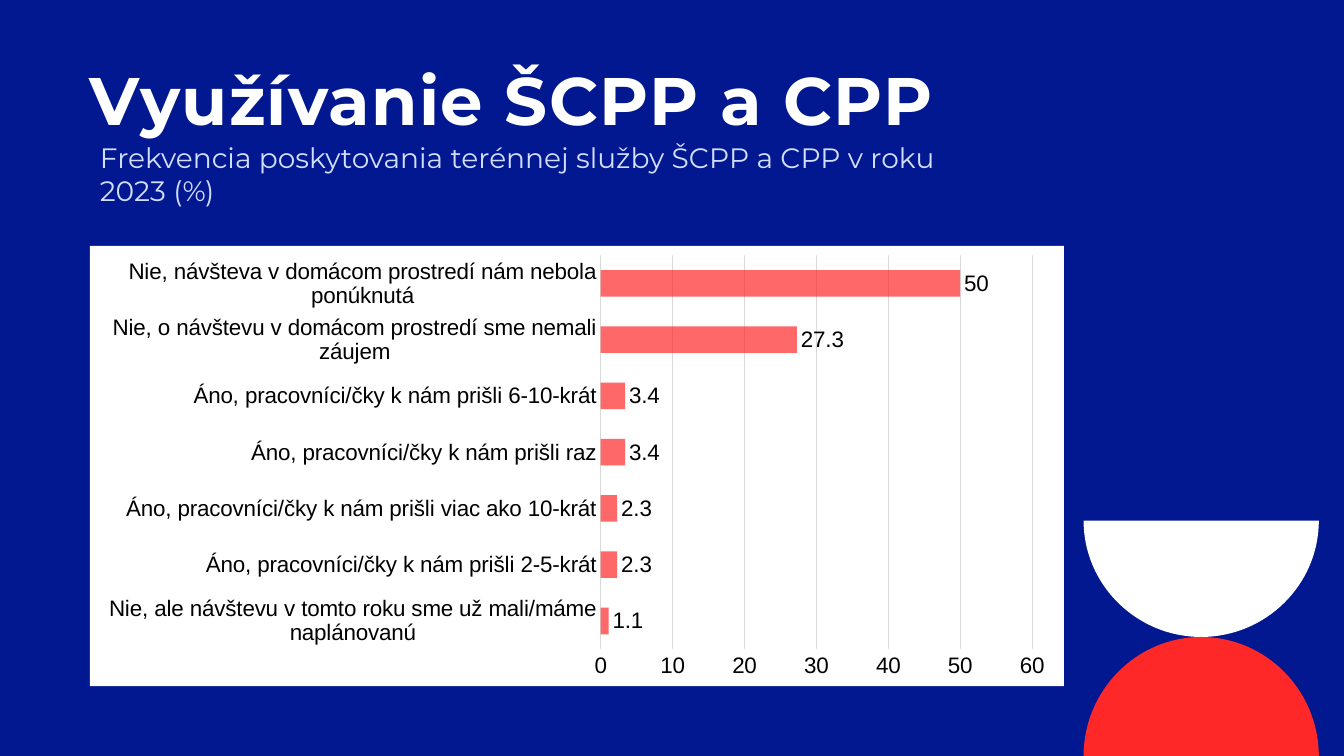
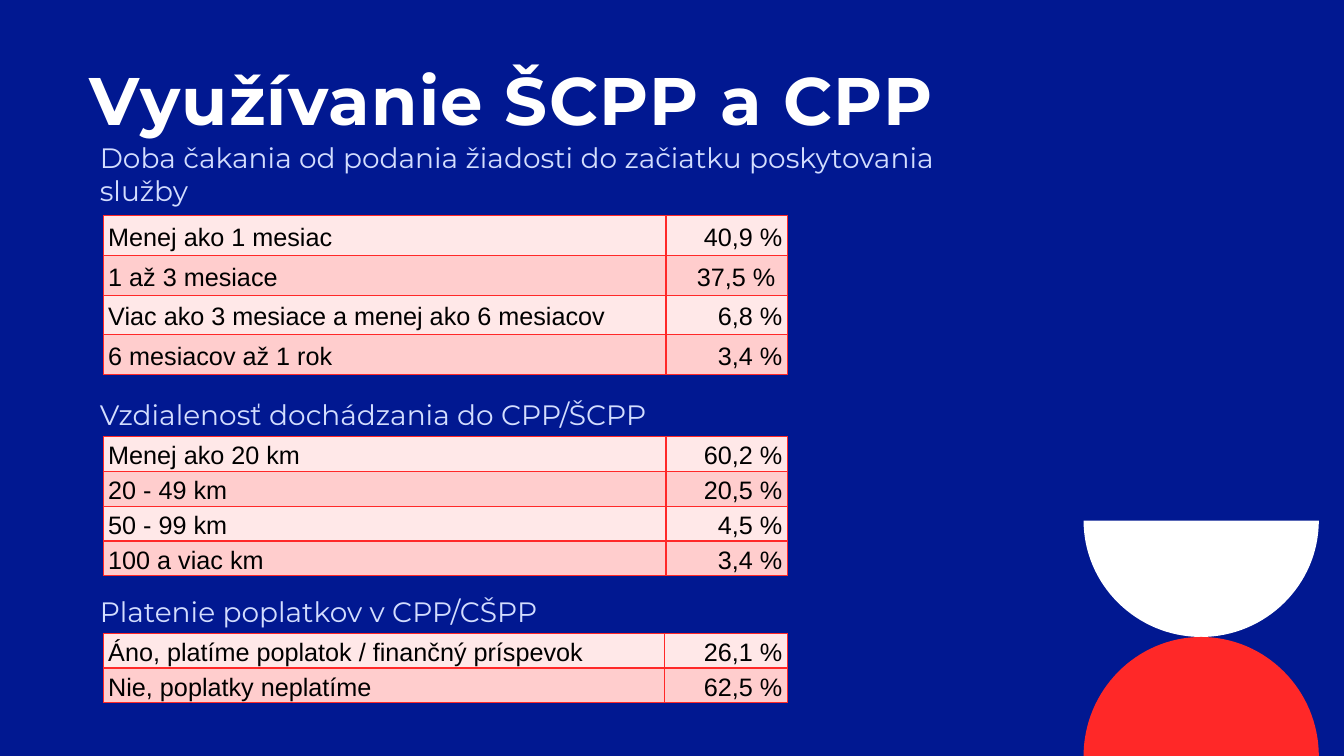
from lxml.etree import SubElement as Sub
from pptx import Presentation
from pptx.chart.data import CategoryChartData as ChartData
from pptx.dml.color import RGBColor
from pptx.enum.chart import XL_CHART_TYPE as Kind
from pptx.enum.chart import XL_LABEL_POSITION as Spot
from pptx.enum.chart import XL_TICK_MARK as Tick
from pptx.enum.text import MSO_ANCHOR as Anchor
from pptx.enum.text import MSO_AUTO_SIZE as Fit
from pptx.enum.text import PP_ALIGN as Align
from pptx.oxml import parse_xml
from pptx.oxml.ns import nsdecls, qn
from pptx.util import Pt

NAVY, WHITE, RED, PALE = "011891", "FFFFFF", "FF2828", "D3DDFE"
BLACK, GREY = "000000", "D9D9D9"
BANDS = ["FFE8E8", "FFCDCD"]
HEAD, BODY = "Montserrat", "Arial"
LEFT = 64.2


def rgb(code):
    return RGBColor.from_string(code)


def put(frame, text, size=18, face=BODY, color=BLACK, bold=False,
        align=Align.LEFT, space=None, track=None):
    para = frame.paragraphs[0]
    para.alignment = align
    para.line_spacing = space
    run = para.add_run()
    run.text = text
    font = run.font
    font.size, font.name, font.bold = Pt(size), face, bold
    font.color.rgb = rgb(color)
    if track:
        run._r.get_or_add_rPr().set("spc", str(track))


deck = Presentation()
deck.slide_width, deck.slide_height = Pt(960), Pt(540)

# Subtitles of each slide: text, top, height
pages = [
    [("Frekvencia poskytovania terénnej služby ŠCPP a CPP v roku 2023 (%)", 96.5, 55.5)],
    [("Doba čakania od podania žiadosti do začiatku poskytovania služby", 96.5, 55.5),
     ("Vzdialenosť dochádzania do CPP/ŠCPP", 280.3, 31.5),
     ("Platenie poplatkov v CPP/CŠPP", 421, 31.5)],
]

for heads in pages:
    slide = deck.slides.add_slide(deck.slide_layouts[6])
    slide.background.fill.solid()
    slide.background.fill.fore_color.rgb = rgb(NAVY)

    # Half discs that touch at y = 455
    mid, rad, touch, bend = 858, 84, 455, 0.55
    for flat, color in [(372, WHITE), (540, RED)]:
        left, right = Pt(mid - rad), Pt(mid + rad)
        form = slide.shapes.build_freeform(left, Pt(flat))
        form.add_line_segments(
            [(right, Pt(flat)), (Pt(mid), Pt(touch)), (left, Pt(flat))])
        disc = form.convert_to_shape()
        disc.shadow.inherit = False
        disc.fill.solid()
        disc.fill.fore_color.rgb = rgb(color)
        disc.line.fill.background()

        # Bend the two slanted sides into quarter arcs
        base, tip = (0, Pt(touch - flat)) if flat < touch else (Pt(flat - touch), 0)
        ends = [(Pt(2 * rad), base), (Pt(rad), tip), (0, base)]
        sides = disc._element.findall(".//" + qn("a:lnTo"))[1:]
        for side, start, end in zip(sides, ends, ends[1:]):
            edge = end[0] if end[1] == base else start[0]
            corner = (edge, tip)
            curve = side.makeelement(qn("a:cubicBezTo"))
            for x, y in [[a + (b - a) * bend for a, b in zip(start, corner)],
                         [a + (b - a) * bend for a, b in zip(end, corner)], end]:
                Sub(curve, qn("a:pt"), x=str(int(x)), y=str(int(y)))
            side.getparent().replace(side, curve)

    # Title
    frame = slide.shapes.add_textbox(Pt(LEFT), Pt(46), Pt(788), Pt(54)).text_frame
    frame.word_wrap = True
    frame.vertical_anchor = Anchor.BOTTOM
    frame.margin_left = frame.margin_right = 0
    frame.margin_top = frame.margin_bottom = 0
    put(frame, "Využívanie ŠCPP a CPP", size=48, face=HEAD, color=WHITE,
        bold=True, space=0.9, track=100)

    # Subtitles
    for text, top, high in heads:
        frame = slide.shapes.add_textbox(Pt(LEFT), Pt(top), Pt(612), Pt(high)).text_frame
        frame.word_wrap = True
        frame.auto_size = Fit.SHAPE_TO_FIT_TEXT
        put(frame, text, size=20, face=HEAD, color=PALE)

# Bar chart on the first slide
visits = [
    ("Nie, ale návštevu v tomto roku sme už mali/máme naplánovanú", 1.1),
    ("Áno, pracovníci/čky k nám prišli 2-5-krát", 2.3),
    ("Áno, pracovníci/čky k nám prišli viac ako 10-krát", 2.3),
    ("Áno, pracovníci/čky k nám prišli raz", 3.4),
    ("Áno, pracovníci/čky k nám prišli 6-10-krát", 3.4),
    ("Nie, o návštevu v domácom prostredí sme nemali záujem", 27.3),
    ("Nie, návšteva v domácom prostredí nám nebola ponúknutá", 50),
]
data = ChartData()
data.categories = [name for name, _ in visits]
data.add_series("Series 1", [value for _, value in visits])
chart = deck.slides[0].shapes.add_chart(
    Kind.BAR_CLUSTERED, Pt(LEFT), Pt(175.7), Pt(695.7), Pt(314.5), data).chart
chart.has_legend = chart.has_title = False
chart.font.size, chart.font.name = Pt(10), BODY
chart.font.color.rgb = rgb(BLACK)

plot = chart.plots[0]
plot.gap_width = 112
plot.vary_by_categories = False
bars = plot.series[0]
bars.format.fill.solid()
bars.format.fill.fore_color.rgb = rgb(RED)
tint = bars._element.find(".//" + qn("a:srgbClr"))
Sub(tint, qn("a:alpha")).set("val", "70000")
marks = bars.data_labels
marks.show_value = True
marks.position = Spot.OUTSIDE_END

cats, vals = chart.category_axis, chart.value_axis
for axis in (cats, vals):
    axis.major_tick_mark = axis.minor_tick_mark = Tick.NONE
for font in (cats.tick_labels.font, vals.tick_labels.font, marks.font):
    font.size, font.name = Pt(16), BODY
    font.color.rgb = rgb(BLACK)
cats.has_major_gridlines = False
vals.has_major_gridlines = True
for line in (cats.format.line, vals.major_gridlines.format.line):
    line.width = Pt(0.75)
    line.color.rgb = rgb(GREY)
vals.format.line.fill.background()
vals.minimum_scale, vals.maximum_scale, vals.major_unit = 0, 60, 10

# White chart ground
root = chart._chartSpace
root.find(qn("c:txPr")).addprevious(parse_xml(
    f'<c:spPr {nsdecls("c", "a")}><a:solidFill><a:srgbClr val="{WHITE}"/>'
    '</a:solidFill><a:ln><a:noFill/></a:ln></c:spPr>'))

# Fixed plot area, in percent of the chart
area = root.find(".//" + qn("c:plotArea"))
for old in area.findall(qn("c:layout")):
    area.remove(old)
layout = parse_xml(f'<c:layout {nsdecls("c")}/>')
manual = Sub(layout, qn("c:manualLayout"))
for tag, value in [("layoutTarget", "inner"), ("xMode", "edge"), ("yMode", "edge")]:
    Sub(manual, qn("c:" + tag)).set("val", value)
for tag, part in [("x", 52.45), ("y", 2.1), ("w", 44.3), ("h", 89.5)]:
    Sub(manual, qn("c:" + tag)).set("val", f"{part / 100:.4f}")
area.insert(0, layout)

# Tables on the second slide: top, row height, first column, rows
tables = [
    (154.1, 28.4, 402, [("Menej ako 1 mesiac", "40,9 %"),
                        ("1 až 3 mesiace", "37,5 % "),
                        ("Viac ako 3 mesiace a menej ako 6 mesiacov", "6,8 %"),
                        ("6 mesiacov až 1 rok", "3,4 %")]),
    (311.8, 24.84, 402, [("Menej ako 20 km", "60,2 %"),
                         ("20 - 49 km", "20,5 %"),
                         ("50 - 99 km", "4,5 %"),
                         ("100 a viac km", "3,4 %")]),
    (452.3, 24.84, 401, [("Áno, platíme poplatok / finančný príspevok", "26,1 %"),
                         ("Nie, poplatky neplatíme", "62,5 %")]),
]
wide = 488.7
for top, high, first, rows in tables:
    grid = deck.slides[1].shapes.add_table(
        len(rows), 2, Pt(73.7), Pt(top), Pt(wide), Pt(high * len(rows))).table
    grid.first_row = grid.horz_banding = False
    grid.columns[0].width, grid.columns[1].width = Pt(first), Pt(wide - first)
    for r, row in enumerate(rows):
        grid.rows[r].height = Pt(high)
        for c, text in enumerate(row):
            cell = grid.cell(r, c)
            cell.margin_left = cell.margin_right = Pt(3.6)
            cell.margin_top = cell.margin_bottom = 0
            cell.vertical_anchor = Anchor.MIDDLE
            put(cell.text_frame, text, space=1.15,
                align=Align.RIGHT if c else Align.JUSTIFY)
            for side in ("lnL", "lnR", "lnT", "lnB"):
                edge = Sub(cell._tc.get_or_add_tcPr(), qn("a:" + side), w=str(Pt(1)))
                Sub(Sub(edge, qn("a:solidFill")), qn("a:srgbClr")).set("val", RED)
            cell.fill.solid()
            cell.fill.fore_color.rgb = rgb(BANDS[r % 2])

deck.save("out.pptx")
